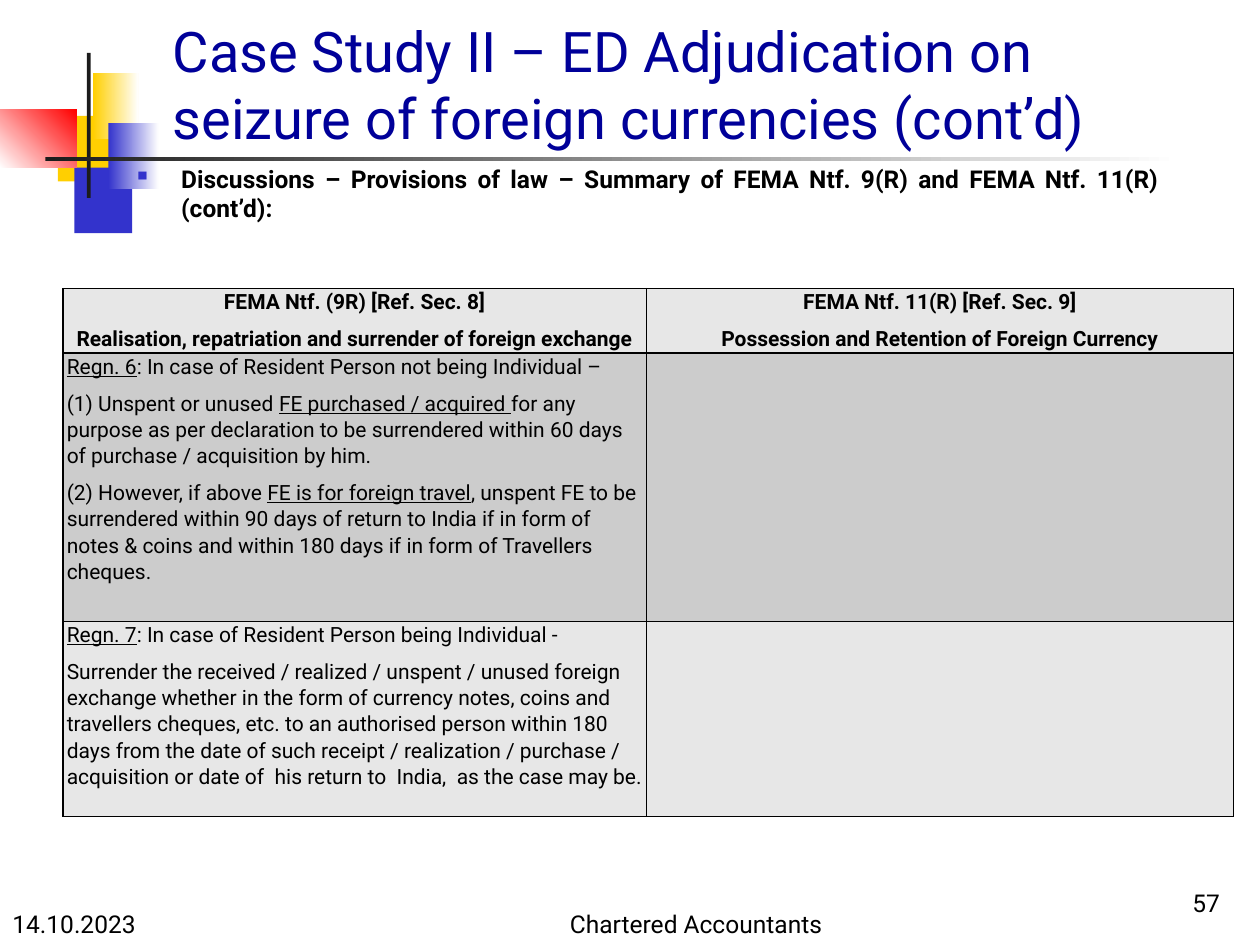
from typing import NamedTuple, Optional

from lxml.etree import SubElement
from pptx import Presentation
from pptx.dml.color import RGBColor
from pptx.enum.shapes import MSO_SHAPE
from pptx.enum.text import MSO_ANCHOR, MSO_AUTO_SIZE, PP_ALIGN
from pptx.oxml.ns import qn
from pptx.util import Inches, Pt

FONT = "Roboto"
BLACK, CHARCOAL, WHITE = "000000", "1C1C1C", "FFFFFF"
YELLOW, BLUE, RED, NAVY = "FFCF01", "3333CC", "FF0000", "000099"
LIGHT, DARK = "E7E7E7", "CCCCCC"


class Block(NamedTuple):
    left: float
    top: float
    width: float
    height: float
    color: str
    end_color: Optional[str] = None
    angle: int = 0


class Note(NamedTuple):
    left: float
    top: float
    width: float
    text: str
    align: PP_ALIGN


class Row(NamedTuple):
    height: float
    color: str
    bold: bool
    align: PP_ALIGN
    cells: list  # one list of paragraphs per cell; _text_ is underlined


BLOCKS = [
    Block(0.46, 0.92, 0.48, 0.52, YELLOW),
    Block(0.59, 1.33, 0.46, 0.52, BLUE),
    Block(0.74, 0.58, 0.36, 0.52, YELLOW, WHITE),
    Block(0.86, 0.98, 0.4, 0.52, BLUE, WHITE),
    Block(0, 0.87, 0.61, 0.46, WHITE, RED, 45),
    Block(0.69, 0.42, 0.03, 1.15, CHARCOAL),
    Block(0.36, 1.25, 9, 0.03, CHARCOAL, WHITE),
]

NOTES = [
    Note(7.7, 6.83, 2.08, "57", PP_ALIGN.RIGHT),
    Note(0, 7, 2.08, "14.10.2023", PP_ALIGN.LEFT),
    Note(3.94, 7, 3.17, "Chartered Accountants", PP_ALIGN.CENTER),
]

COLUMN_WIDTHS = [4.63, 4.66]
ROWS = [
    Row(0.5, LIGHT, True, PP_ALIGN.CENTER, [
        ["FEMA Ntf. (9R) [Ref. Sec. 8]",
         "Realisation, repatriation and surrender of foreign exchange"],
        ["FEMA Ntf. 11(R) [Ref. Sec. 9]",
         "Possession and Retention of Foreign Currency"],
    ]),
    Row(2.13, DARK, False, PP_ALIGN.LEFT, [
        ["_Regn. 6_: In case of Resident Person not being Individual –",
         "(1) Unspent or unused _FE purchased / acquired _for any purpose as per "
         "declaration to be surrendered within 60 days of purchase / acquisition by him.",
         "(2) However, if above _FE is for foreign travel_, unspent FE to be surrendered "
         "within 90 days of return to India if in form of notes & coins and within "
         "180 days if in form of Travellers cheques."],
        [],
    ]),
    Row(1.55, LIGHT, False, PP_ALIGN.LEFT, [
        ["_Regn. 7_: In case of Resident Person being Individual -",
         "Surrender the received / realized / unspent / unused foreign exchange whether "
         "in the form of currency notes, coins and travellers cheques, etc. to an "
         "authorised person within 180 days from the date of such receipt / realization / "
         "purchase / acquisition or date of  his return to  India,  as the case may be."],
        [],
    ]),
]


def rgb(color: str) -> RGBColor:
    return RGBColor.from_string(color)


def style(para, size: float, color: str = BLACK, bold: bool = False,
          align: PP_ALIGN = PP_ALIGN.LEFT) -> None:
    font = para.font
    font.name, font.size, font.bold = FONT, Pt(size), bold
    font.color.rgb = rgb(color)
    para.alignment = align


def add_block(page, block: Block) -> None:
    shape = page.shapes.add_shape(MSO_SHAPE.RECTANGLE, *map(Inches, block[:4]))
    shape.shadow.inherit = False
    shape.line.fill.background()
    if block.end_color is None:
        shape.fill.solid()
        shape.fill.fore_color.rgb = rgb(block.color)
        return
    shape.fill.gradient()
    shape.fill.gradient_angle = block.angle
    for stop, color in zip(shape.fill.gradient_stops, (block.color, block.end_color)):
        stop.color.rgb = rgb(color)


def set_title(page, text: str) -> None:
    title = page.shapes.title
    title.left, title.top = Inches(1.27), Inches(0)
    title.width, title.height = Inches(8.5), Inches(1.25)
    frame = title.text_frame
    frame.text = text
    frame.auto_size = MSO_AUTO_SIZE.NONE
    frame.vertical_anchor = MSO_ANCHOR.BOTTOM
    style(frame.paragraphs[0], 32, NAVY)


def add_text(page, left: float, top: float, width: float, height: float, text: str):
    """Add a wrapping text box and return its text frame."""
    box = page.shapes.add_textbox(*map(Inches, (left, top, width, height)))
    frame = box.text_frame
    frame.word_wrap = True
    frame.text = text
    return frame


def add_bullet(para, mark: str, color: str, indent: float) -> None:
    properties = para._p.get_or_add_pPr()
    properties.set("marL", str(Inches(indent)))
    properties.set("indent", str(-Inches(indent)))
    bullet_color = SubElement(properties, qn("a:buClr"))
    SubElement(bullet_color, qn("a:srgbClr"), val=color)
    SubElement(properties, qn("a:buChar"), char=mark)


def add_note(page, note: Note) -> None:
    frame = add_text(page, note.left, note.top, note.width, 0.5, note.text)
    frame.vertical_anchor = MSO_ANCHOR.BOTTOM
    style(frame.paragraphs[0], 14, align=note.align)


def add_borders(cell, width: float = 1) -> None:
    properties = cell._tc.get_or_add_tcPr()
    for position, side in enumerate(("a:lnL", "a:lnR", "a:lnT", "a:lnB")):
        line = properties.makeelement(qn(side), {"w": str(Pt(width))})
        fill = SubElement(line, qn("a:solidFill"))
        SubElement(fill, qn("a:srgbClr"), val=BLACK)
        properties.insert(position, line)


def fill_cell(cell, row: Row, texts: list) -> None:
    cell.fill.solid()
    cell.fill.fore_color.rgb = rgb(row.color)
    cell.margin_left = cell.margin_right = Inches(0.03)
    cell.margin_top = cell.margin_bottom = Inches(0)
    add_borders(cell)
    frame = cell.text_frame
    for number, text in enumerate(texts):
        para = frame.add_paragraph() if number else frame.paragraphs[0]
        para.line_spacing, para.space_after = 1.07, Pt(6)
        style(para, 12, bold=row.bold, align=row.align)
        for index, part in enumerate(text.split("_")):
            if part:
                span = para.add_run()
                span.text = part
                if index % 2:
                    span.font.underline = True


def add_rules_table(page) -> None:
    heights = [row.height for row in ROWS]
    size = (0.5, 2.29, sum(COLUMN_WIDTHS), sum(heights))
    table = page.shapes.add_table(len(ROWS), len(COLUMN_WIDTHS), *map(Inches, size)).table
    table.first_row = table.horz_banding = False
    for column, width in zip(table.columns, COLUMN_WIDTHS):
        column.width = Inches(width)
    for line, row in zip(table.rows, ROWS):
        line.height = Inches(row.height)
        for cell, texts in zip(line.cells, row.cells):
            fill_cell(cell, row, texts)


def main() -> None:
    deck = Presentation()
    deck.slide_width, deck.slide_height = Inches(10), Inches(7.5)
    page = deck.slides.add_slide(deck.slide_layouts[5])
    for block in BLOCKS:
        add_block(page, block)
    set_title(page, "Case Study II – ED Adjudication on seizure of foreign currencies (cont’d)")
    summary = add_text(page, 0.96, 1.25, 8.34, 5.99, "Discussions – Provisions of law – Summary "
                       "of FEMA Ntf. 9(R) and FEMA Ntf. 11(R) (cont’d):").paragraphs[0]
    summary.space_before = summary.space_after = Pt(6)
    add_bullet(summary, "▪", BLUE, 0.38)
    style(summary, 14, bold=True, align=PP_ALIGN.JUSTIFY)
    for note in NOTES:
        add_note(page, note)
    add_rules_table(page)
    deck.save("out.pptx")


if __name__ == "__main__":
    main()
